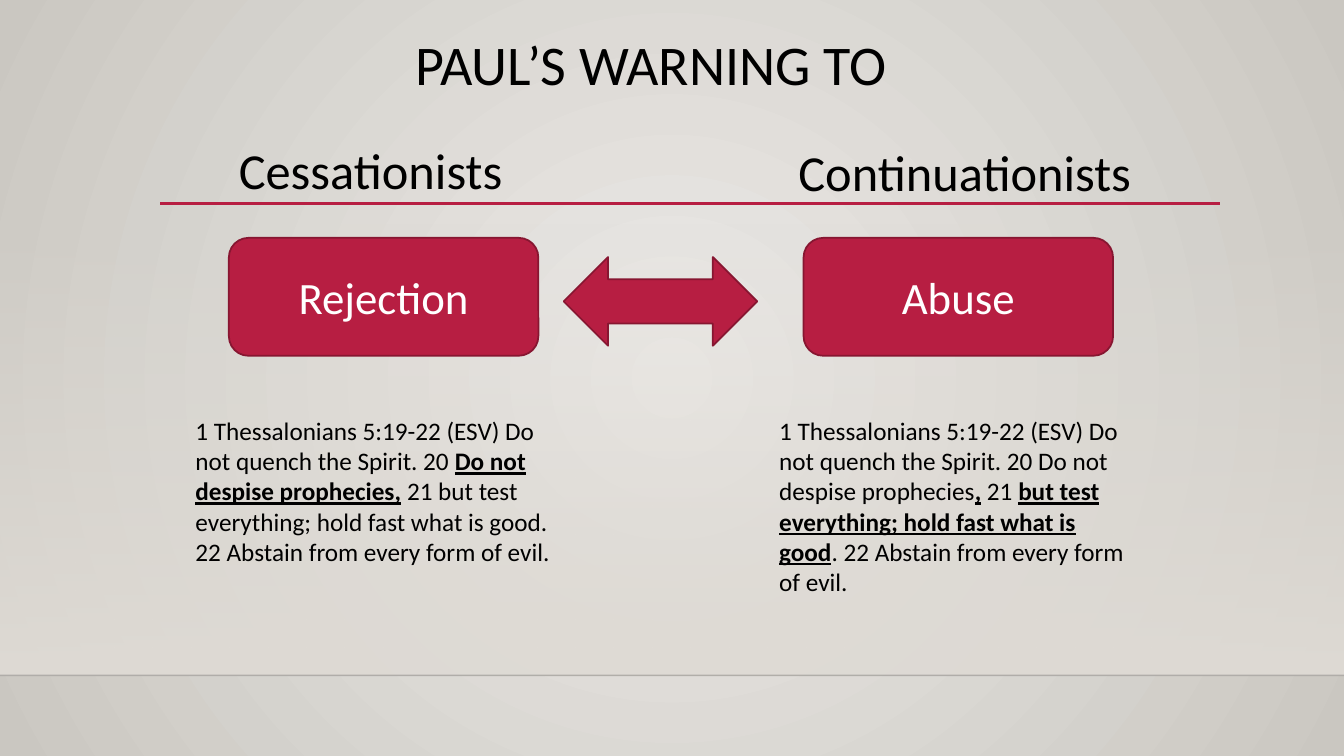
from dataclasses import dataclass

from lxml import etree
from pptx import Presentation
from pptx.dml.color import RGBColor
from pptx.enum.shapes import MSO_CONNECTOR as Link, MSO_SHAPE as Kind
from pptx.enum.text import MSO_ANCHOR as Anchor, MSO_AUTO_SIZE as Fit, PP_ALIGN as Align
from pptx.oxml.ns import qn
from pptx.util import Emu, Pt

PX = 9144  # 100 px to the inch
WIDE, HIGH = 1333, 750
RED, EDGE, SAND = "B71E42", "871631", "DFDBD5"
BLACK, WHITE = "000000", "FFFFFF"


@dataclass
class Box:
    x: int
    y: int
    w: int
    h: int

    def emu(self) -> list[Emu]:
        return [Emu(v * PX) for v in (self.x, self.y, self.w, self.h)]


@dataclass
class Rule:
    x1: int
    x2: int
    y: int
    color: str
    width: float
    alpha: int = 100


@dataclass
class Column:
    """One side of the contrast; verse parts alternate plain and stressed."""
    head: str
    head_box: Box
    label: str
    label_box: Box
    verse: tuple[str, ...]
    verse_box: Box


RULES = [
    Rule(0, WIDE, 670, "000001", 1, 20),
    Rule(159, 1210, 202, RED, 2.5),
]
COLUMNS = [
    Column("Cessationists", Box(227, 133, 288, 71),
           "Rejection", Box(227, 236, 307, 117),
           ("1 Thessalonians 5:19-22 (ESV) Do not quench the Spirit. 20 ",
            "Do not despise prophecies,",
            " 21 but test everything; hold fast what is good. "
            "22 Abstain from every form of evil."),
           Box(184, 407, 375, 162)),
    Column("Continuationists", Box(782, 135, 356, 71),
           "Abuse", Box(797, 236, 307, 117),
           ("1 Thessalonians 5:19-22 (ESV) Do not quench the Spirit. "
            "20 Do not despise prophecies",
            ",",
            " 21 ",
            "but test everything; hold fast what is good",
            ". 22 Abstain from every form of evil."),
           Box(763, 407, 375, 192)),
]


def rgb(code: str) -> RGBColor:
    return RGBColor.from_string(code)


def apply(item, **values) -> None:
    for name, value in values.items():
        setattr(item, name, value)


def fade(root, alpha: int) -> None:
    """Set the opacity, in percent, of the first colour under root."""
    color = next(root.iter(qn("a:srgbClr")))
    etree.SubElement(color, qn("a:alpha")).set("val", str(alpha * 1000))


def blend(fill, first: str, last: str) -> None:
    fill.gradient()
    for stop, code, place in zip(fill.gradient_stops, (first, last), (0, 1)):
        stop.color.rgb = rgb(code)
        stop.position = place


def write(para, parts: tuple[str, ...], size: int, color: str) -> None:
    for i, part in enumerate(parts):
        run = para.add_run()
        run.text = part
        stress = i % 2 == 1
        apply(run.font, name="Calibri", size=Pt(size), bold=stress, underline=stress)
        run.font.color.rgb = rgb(color)


def backdrop(slide) -> None:
    blend(slide.background.fill, "ECEAE7", "CAC7C1")
    grad = next(slide.element.iter(qn("a:gradFill")))
    grad.remove(grad.find(qn("a:lin")))
    path = etree.SubElement(grad, qn("a:path"), {"path": "circle"})
    etree.SubElement(path, qn("a:fillToRect"), dict.fromkeys("ltrb", "50000"))


def band(slide) -> None:
    shape = slide.shapes.add_shape(Kind.RECTANGLE, *Box(0, 221, WIDE, 449).emu())
    shape.shadow.inherit = False
    shape.line.fill.background()
    blend(shape.fill, SAND, SAND)
    shape.fill.gradient_angle = 270
    fade(shape.element.spPr, 0)


def rule(slide, item: Rule) -> None:
    ends = [Emu(v * PX) for v in (item.x1, item.y, item.x2, item.y)]
    line = slide.shapes.add_connector(Link.STRAIGHT, *ends)
    line.line.width = Pt(item.width)
    line.line.color.rgb = rgb(item.color)
    if item.alpha < 100:
        fade(line.element.spPr, item.alpha)
    etree.SubElement(line.element.spPr, qn("a:effectLst"))


def block(slide, kind: Kind, box: Box, label: str = "") -> None:
    shape = slide.shapes.add_shape(kind, *box.emu())
    shape.shadow.inherit = False
    shape.fill.solid()
    shape.fill.fore_color.rgb = rgb(RED)
    shape.line.color.rgb = rgb(EDGE)
    shape.line.width = Pt(1.25)
    if label:
        frame = shape.text_frame
        frame.vertical_anchor = Anchor.MIDDLE
        frame.paragraphs[0].alignment = Align.CENTER
        write(frame.paragraphs[0], (label,), 32, WHITE)


def note(slide, box: Box, parts: tuple[str, ...], size: int, wrap: bool) -> None:
    frame = slide.shapes.add_textbox(*box.emu()).text_frame
    apply(frame, word_wrap=wrap, auto_size=Fit.SHAPE_TO_FIT_TEXT)
    write(frame.paragraphs[0], parts, size, BLACK)


def title(slide, text: str) -> None:
    shape = slide.shapes.title
    spot = Box(402, 32, 1050, 115).emu()
    apply(shape, **dict(zip(("left", "top", "width", "height"), spot)))
    frame = shape.text_frame
    apply(frame, vertical_anchor=Anchor.TOP, auto_size=Fit.NONE, word_wrap=True)
    para = frame.paragraphs[0]
    apply(para, alignment=Align.LEFT, line_spacing=0.9)
    write(para, (text,), 40, BLACK)


def main() -> None:
    deck = Presentation()
    apply(deck, slide_width=Emu(WIDE * PX), slide_height=Emu(HIGH * PX))
    slide = deck.slides.add_slide(deck.slide_layouts[5])
    backdrop(slide)
    band(slide)
    for item in RULES:
        rule(slide, item)
    title(slide, "PAUL’S WARNING TO")
    for col in COLUMNS:
        block(slide, Kind.ROUNDED_RECTANGLE, col.label_box, col.label)
        note(slide, col.verse_box, col.verse, 18, True)
        note(slide, col.head_box, (col.head,), 36, False)
    block(slide, Kind.LEFT_RIGHT_ARROW, Box(559, 255, 192, 88))
    deck.save("out.pptx")


if __name__ == "__main__":
    main()
